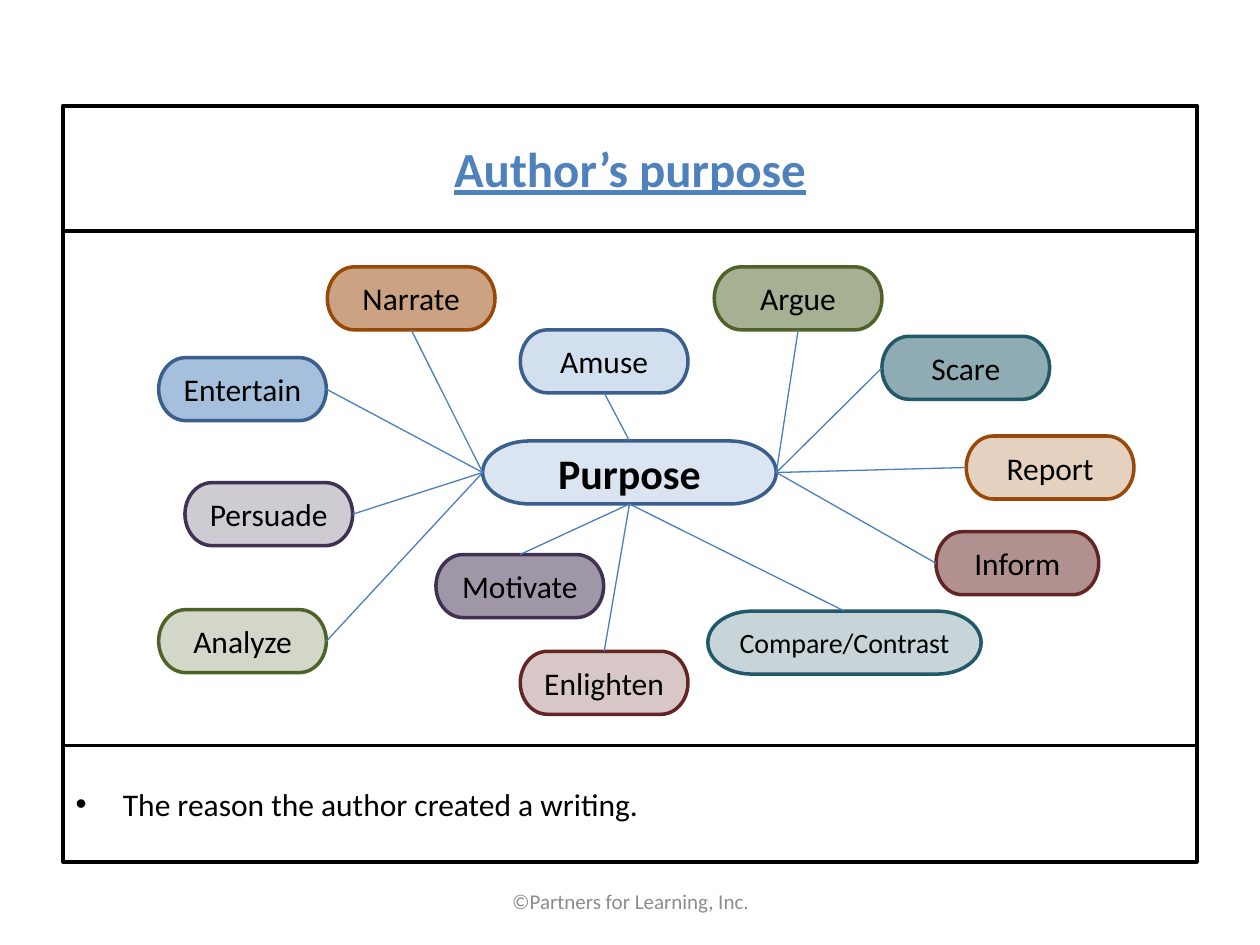
import pptx
import pptx.util
import pptx.dml.color
import pptx.enum.shapes
import pptx.enum.text
import pptx.oxml
import pptx.oxml.ns

Cm = pptx.util.Cm
Pt = pptx.util.Pt
RGB = pptx.dml.color.RGBColor
SHAPE = pptx.enum.shapes.MSO_SHAPE
ALIGN = pptx.enum.text.PP_ALIGN
qn = pptx.oxml.ns.qn

BLACK = RGB(0, 0, 0)
GREY = RGB(0x8C, 0x8C, 0x8C)
BLUE = RGB(0x4F, 0x81, 0xBD)
NAVY = RGB(0x3A, 0x5F, 0x8C)
LINK = RGB(0x4B, 0x7E, 0xBC)
ORANGE = RGB(0x98, 0x48, 0x07)
RED = RGB(0x63, 0x25, 0x23)
PURPLE = RGB(0x40, 0x31, 0x52)
TEAL = RGB(0x21, 0x59, 0x68)
GREEN = RGB(0x4F, 0x62, 0x28)

TOP, LEFT, BOTTOM, RIGHT = range(4)
TALL, WIDE = 1.27, 3.38

# Boxes are left, top, width, height in centimetres
HEAD = (1.27, 2.13, 22.86, 2.52)
MAP = (1.27, 4.65, 22.86, 10.38)
FOOT = (1.27, 15.03, 22.86, 2.34)
CREDIT = (8.69, 17.65, 8.05, 1.02)

HUB = ("Purpose", 8.46, 4.24, 5.92, BLUE, NAVY, 20, 24)
# Name, left, top, width, fill, line, opacity, size, own side, hub side
NODES = [
    ("Report", 18.21, 4.14, WIDE, ORANGE, ORANGE, 25, 18, LEFT, RIGHT),
    ("Inform", 17.6, 6.07, 3.28, RED, RED, 50, 18, LEFT, RIGHT),
    ("Entertain", 1.93, 2.56, WIDE, BLUE, NAVY, 50, 18, RIGHT, LEFT),
    ("Persuade", 2.46, 5.08, WIDE, PURPLE, PURPLE, 25, 18, RIGHT, LEFT),
    ("Narrate", 5.33, 0.73, WIDE, ORANGE, ORANGE, 50, 18, BOTTOM, LEFT),
    ("Compare/Contrast", 13, 7.67, 5.51, TEAL, TEAL, 25, 16, TOP, BOTTOM),
    ("Argue", 13.13, 0.73, WIDE, GREEN, GREEN, 50, 18, BOTTOM, RIGHT),
    ("Motivate", 7.52, 6.53, WIDE, PURPLE, PURPLE, 50, 18, TOP, BOTTOM),
    ("Scare", 16.51, 2.13, WIDE, TEAL, TEAL, 50, 18, LEFT, RIGHT),
    ("Analyze", 1.93, 7.64, WIDE, GREEN, GREEN, 25, 18, RIGHT, LEFT),
    ("Enlighten", 9.22, 8.48, WIDE, RED, RED, 25, 18, TOP, BOTTOM),
    ("Amuse", 9.22, 2, WIDE, BLUE, NAVY, 25, 18, BOTTOM, TOP),
]


def place(shape, box):
    shape.left, shape.top, shape.width, shape.height = map(Cm, box)


def write(shape, text, size, color, align=ALIGN.CENTER, bold=False):
    frame = shape.text_frame
    frame.text = text
    frame.word_wrap = True
    frame.auto_size = pptx.enum.text.MSO_AUTO_SIZE.NONE
    frame.vertical_anchor = pptx.enum.text.MSO_ANCHOR.MIDDLE
    para = frame.paragraphs[0]
    para.alignment = align
    para.space_before = Pt(0)
    font = para.runs[0].font
    font.name, font.size, font.bold = "Calibri", Pt(size), bold
    font.color.rgb = color
    return para


def add_frame(slide, box):
    frame = slide.shapes.add_shape(SHAPE.RECTANGLE, *map(Cm, box))
    frame.shadow.inherit = False
    frame.fill.background()
    frame.line.color.rgb = BLACK
    frame.line.width = Pt(2.25)


def add_head(slide, box):
    add_frame(slide, box)
    title = slide.shapes.title
    place(title, box)
    para = write(title, "Author’s purpose", 28, BLUE, bold=True)
    para.runs[0].font.underline = True


def add_node(slide, box, name, left, top, width, fill, line, alpha, size):
    """Add a see-through pill at an offset from the box's corner."""
    spot = (box[0] + left, box[1] + top, width, TALL)
    node = slide.shapes.add_shape(SHAPE.FLOWCHART_TERMINATOR, *map(Cm, spot))
    node.shadow.inherit = False
    node.fill.solid()
    node.fill.fore_color.rgb = fill
    tint = node._element.spPr.find(qn("a:solidFill")).find(qn("a:srgbClr"))
    pptx.oxml.ns  # namespace helpers serve the alpha element below
    shade = pptx.oxml.parse_xml(
        f'<a:alpha {pptx.oxml.ns.nsdecls("a")} val="{alpha * 1000}"/>')
    tint.append(shade)
    node.line.color.rgb = line
    node.line.width = Pt(2)
    write(node, name, size, BLACK, bold=size > 18)
    return node


def add_link(slide, node, side, hub, port):
    kind = pptx.enum.shapes.MSO_CONNECTOR.STRAIGHT
    link = slide.shapes.add_connector(kind, 0, 0, 0, 0)
    link.begin_connect(node, side)
    link.end_connect(hub, port)
    link.line.color.rgb = LINK
    link.line.width = Pt(0.75)
    link._element.spPr.append(pptx.oxml.parse_xml(
        f'<a:effectLst {pptx.oxml.ns.nsdecls("a")}/>'))


def add_map(slide, box):
    add_frame(slide, box)
    hub = add_node(slide, box, *HUB)
    for *look, side, port in NODES:
        node = add_node(slide, box, *look)
        add_link(slide, node, side, hub, port)


def add_foot(slide, box):
    add_frame(slide, box)
    body = slide.placeholders[1]
    place(body, box)
    body.text_frame.text = ""
    props = body.text_frame.paragraphs[0]._p.get_or_add_pPr()
    props.set("marL", "0")
    props.set("indent", "0")
    props.append(pptx.oxml.parse_xml(
        f'<a:buNone {pptx.oxml.ns.nsdecls("a")}/>'))
    write(body, "The reason the author created a writing.", 18, BLACK,
          ALIGN.LEFT)


def add_credit(slide, box):
    note = slide.shapes.add_textbox(*map(Cm, box))
    write(note, "©Partners for Learning, Inc.", 12, GREY)


def main():
    deck = pptx.Presentation()
    deck.slide_width, deck.slide_height = Cm(25.4), Cm(19.05)
    slide = deck.slides.add_slide(deck.slide_layouts[1])
    add_head(slide, HEAD)
    add_map(slide, MAP)
    add_foot(slide, FOOT)
    add_credit(slide, CREDIT)
    deck.save("out.pptx")


if __name__ == "__main__":
    main()
